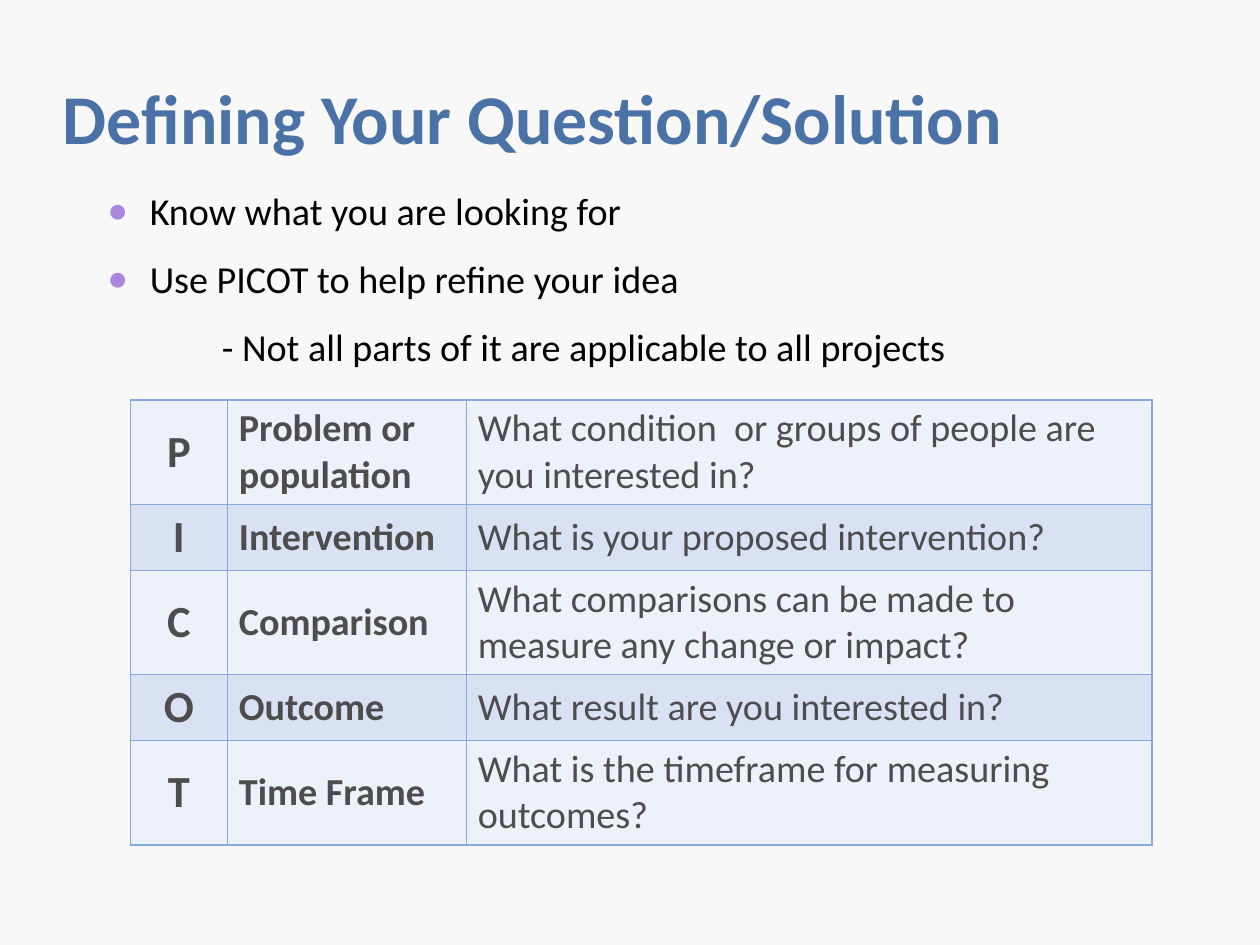
"""Build the slide on defining a question with the PICOT table."""
from dataclasses import dataclass

from lxml import etree
from pptx import Presentation
from pptx import util as u
from pptx.dml.color import RGBColor
from pptx.enum import text
from pptx.oxml import ns

FONT = "Calibri"
COLORS = {
    "background": "F8F8F8",
    "title": "4B72A7",
    "body": "000000",
    "bullet": "AA87DE",
    "cell": "4D4D4D",
    "border": "87AADE",
    "odd_row": "EDF1F9",
    "even_row": "D9E2F2",
}
CM_PER_INCH = 2.54
COLUMN_WIDTHS = (0.85, 2.09, 6)


@dataclass
class Point:
    words: str
    margin: float = 0.37
    bulleted: bool = True


@dataclass
class PicotRow:
    letter: str
    term: str
    question: str
    height: float


POINTS = [
    Point("Know what you are looking for"),
    Point("Use PICOT to help refine your idea"),
    Point("- Not all parts of it are applicable to all projects", 1, False),
]
ROWS = [
    PicotRow("P", "Problem or\vpopulation",
             "What condition  or groups of people are you interested in?", 0.91),
    PicotRow("I", "Intervention", "What is your proposed intervention?", 0.57),
    PicotRow("C", "Comparison",
             "What comparisons can be made to measure any change or impact?", 0.91),
    PicotRow("O", "Outcome", "What result are you interested in?", 0.57),
    PicotRow("T", "Time Frame", "What is the timeframe for measuring outcomes?", 0.91),
]


def rgb(name: str) -> RGBColor:
    return RGBColor.from_string(COLORS[name])


def write(p, words: str, size: float, color: str, bold: bool = False,
          align=text.PP_ALIGN.LEFT) -> None:
    p.text = words
    p.alignment = align
    for r in p.runs:
        r.font.name = FONT
        r.font.size = u.Pt(size)
        r.font.bold = bold
        r.font.color.rgb = rgb(color)


def set_frame(tf) -> None:
    tf.word_wrap = True
    tf.auto_size = text.MSO_AUTO_SIZE.NONE
    tf.vertical_anchor = text.MSO_ANCHOR.MIDDLE
    tf.margin_left = tf.margin_right = tf.margin_top = tf.margin_bottom = 0


def set_indent(p, point: Point) -> None:
    pPr = p._p.get_or_add_pPr()
    pPr.set("marL", str(u.Inches(point.margin)))
    pPr.set("indent", str(u.Inches(-point.margin if point.bulleted else 0)))
    if point.bulleted:
        color = etree.SubElement(pPr, ns.qn("a:buClr"))
        etree.SubElement(color, ns.qn("a:srgbClr"), val=COLORS["bullet"])
        etree.SubElement(pPr, ns.qn("a:buSzPct"), val="110000")
        etree.SubElement(pPr, ns.qn("a:buFont"), typeface=FONT)
        etree.SubElement(pPr, ns.qn("a:buChar"), char="•")


def set_borders(cell) -> None:
    tcPr = cell._tc.get_or_add_tcPr()
    for i, side in enumerate("LRTB"):
        ln = etree.Element(ns.qn(f"a:ln{side}"), w=str(u.Pt(1)))
        fill = etree.SubElement(ln, ns.qn("a:solidFill"))
        etree.SubElement(fill, ns.qn("a:srgbClr"), val=COLORS["border"])
        tcPr.insert(i, ln)


def add_title(s) -> None:
    sp = s.shapes.title
    sp.left, sp.top, sp.width, sp.height = map(u.Inches, (0.55, 0.33, 9.92, 1.38))
    set_frame(sp.text_frame)
    write(sp.text_frame.paragraphs[0], "Defining Your Question/Solution", 44, "title", True)


def add_points(s) -> None:
    tf = s.shapes.add_textbox(*map(u.Inches, (0.94, 1.53, 9.29, 1.81))).text_frame
    set_frame(tf)
    for i, point in enumerate(POINTS):
        p = tf.add_paragraph() if i else tf.paragraphs[0]
        write(p, point.words, 24, "body")
        p.space_before = u.Pt(14.1)
        set_indent(p, point)


def add_picot_table(s) -> None:
    height = sum(row.height for row in ROWS)
    table = s.shapes.add_table(
        len(ROWS), len(COLUMN_WIDTHS),
        *map(u.Inches, (1.14, 3.5, sum(COLUMN_WIDTHS), height))).table
    table.first_row = table.horz_banding = False
    for column, width in zip(table.columns, COLUMN_WIDTHS):
        column.width = u.Inches(width)
    for i, row in enumerate(ROWS):
        table.rows[i].height = u.Inches(row.height)
        contents = (
            (row.letter, 28, True, text.PP_ALIGN.CENTER),
            (row.term, 24, True, text.PP_ALIGN.LEFT),
            (row.question, 24, False, text.PP_ALIGN.LEFT),
        )
        for cell, (words, size, bold, align) in zip(table.rows[i].cells, contents):
            cell.vertical_anchor = text.MSO_ANCHOR.MIDDLE
            cell.fill.solid()
            cell.fill.fore_color.rgb = rgb("even_row" if i % 2 else "odd_row")
            set_borders(cell)
            write(cell.text_frame.paragraphs[0], words, size, "cell", bold, align)


def main() -> None:
    prs = Presentation()
    prs.slide_width = u.Inches(28 / CM_PER_INCH)
    prs.slide_height = u.Inches(21 / CM_PER_INCH)
    s = prs.slides.add_slide(prs.slide_layouts[5])
    s.background.fill.solid()
    s.background.fill.fore_color.rgb = rgb("background")
    add_title(s)
    add_points(s)
    add_picot_table(s)
    prs.save("out.pptx")


if __name__ == "__main__":
    main()
